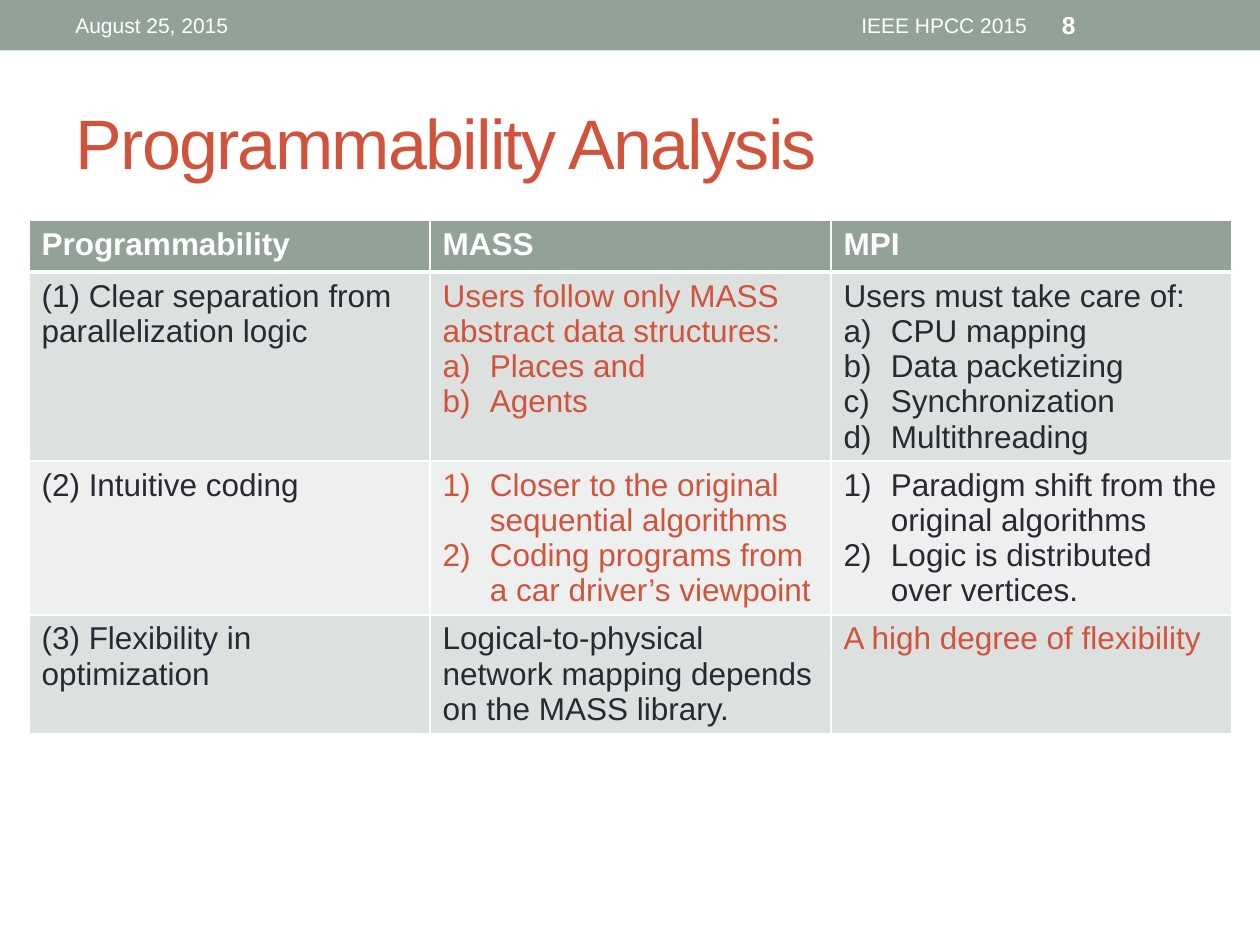
from lxml import etree
from pptx import Presentation
from pptx import util as u
from pptx.dml.color import RGBColor
from pptx.enum import shapes, text
from pptx.oxml import ns

HUES = {"sage": "93A299", "red": "D2533C", "ink": "292934",
        "white": "FFFFFF", "dark": "DCE0DE", "pale": "EEF0EF"}
ALPHA, DIGIT = "alphaLcParenR", "arabicParenR"

HEADS = ["Programmability", "MASS", "MPI"]
ROWS = [
    [("ink", [("(1) Clear separation from parallelization logic", None)]),
     ("red", [("Users follow only MASS abstract data structures:", None),
              ("Places and", ALPHA), ("Agents", ALPHA)]),
     ("ink", [("Users must take care of:", None),
              ("CPU mapping", ALPHA), ("Data packetizing", ALPHA),
              ("Synchronization", ALPHA), ("Multithreading", ALPHA)])],
    [("ink", [("(2) Intuitive coding", None)]),
     ("red", [("Closer to the original sequential algorithms", DIGIT),
              ("Coding programs from a car driver’s viewpoint", DIGIT)]),
     ("ink", [("Paradigm shift from the original algorithms", DIGIT),
              ("Logic is distributed over vertices.", DIGIT)])],
    [("ink", [("(3) Flexibility in optimization", None)]),
     ("ink", [("Logical-to-physical network mapping depends on the MASS library.", None)]),
     ("red", [("A high degree of flexibility", None)])],
]


def color(name):
    return RGBColor.from_string(HUES[name])


def add_run(para, words, size, hue, bold=False):
    run = para.add_run()
    run.text = words
    font = run.font
    font.name, font.size, font.bold = "Arial", u.Pt(size), bold
    font.color.rgb = color(hue)
    return run


def add_band(slide):
    band = slide.shapes.add_shape(shapes.MSO_SHAPE.RECTANGLE, 0, 0,
                                  u.Inches(10), u.Inches(0.4))
    band.shadow.inherit = False
    band.fill.solid()
    band.fill.fore_color.rgb = color("sage")
    band.line.fill.background()


def add_label(slide, left, width, words, size, bold=False,
              align=text.PP_ALIGN.LEFT):
    box = slide.shapes.add_textbox(u.Inches(left), u.Inches(0.02),
                                   u.Inches(width), u.Inches(0.36))
    frame = box.text_frame
    frame.word_wrap = True
    frame.vertical_anchor = text.MSO_ANCHOR.MIDDLE
    para = frame.paragraphs[0]
    para.alignment = align
    add_run(para, words, size, "white", bold)


def set_title(slide, words):
    title = slide.shapes.title
    title.left, title.top = u.Inches(0.5), u.Inches(0.58)
    title.width, title.height = u.Inches(9), u.Inches(1.08)
    frame = title.text_frame
    frame.auto_size = text.MSO_AUTO_SIZE.NONE
    frame.vertical_anchor = text.MSO_ANCHOR.MIDDLE
    para = frame.paragraphs[0]
    para.alignment = text.PP_ALIGN.LEFT
    run = add_run(para, words, 40, "red")
    run._r.get_or_add_rPr().set("spc", "-100")


def set_number(para, kind):
    props = para._p.get_or_add_pPr()
    props.set("marL", str(u.Inches(0.375)))
    props.set("indent", str(-u.Inches(0.375)))
    etree.SubElement(props, ns.qn("a:buFont"), typeface="+mj-lt")
    etree.SubElement(props, ns.qn("a:buAutoNum"), type=kind)


def set_edges(cell, widths):
    props = cell._tc.get_or_add_tcPr()
    for side, width in zip("LRTB", widths):
        line = etree.SubElement(props, ns.qn("a:ln" + side), w=str(u.Pt(width)))
        fill = etree.SubElement(line, ns.qn("a:solidFill"))
        etree.SubElement(fill, ns.qn("a:srgbClr"), val=HUES["white"])


def fill_cell(cell, items, hue, back, widths, bold=False):
    set_edges(cell, widths)
    cell.fill.solid()
    cell.fill.fore_color.rgb = color(back)
    frame = cell.text_frame
    for i, (words, kind) in enumerate(items):
        para = frame.add_paragraph() if i else frame.paragraphs[0]
        if kind:
            set_number(para, kind)
        add_run(para, words, 18, hue, bold)


def add_grid(slide):
    count = len(ROWS) + 1
    grid = slide.shapes.add_table(count, len(HEADS), u.Inches(0.23), u.Inches(1.75),
                                  u.Inches(9.55), u.Inches(0.41 * count)).table
    for c, head in enumerate(HEADS):
        fill_cell(grid.cell(0, c), [(head, None)], "white", "sage", (1, 1, 1, 3), True)
    for r, row in enumerate(ROWS, 1):
        back = "dark" if r % 2 else "pale"
        top = 3 if r == 1 else 1
        for c, (hue, items) in enumerate(row):
            fill_cell(grid.cell(r, c), items, hue, back, (1, 1, top, 1))


def main():
    deck = Presentation()
    deck.slide_width, deck.slide_height = u.Inches(10), u.Inches(7.5)
    slide = deck.slides.add_slide(deck.slide_layouts[5])
    add_band(slide)
    set_title(slide, "Programmability Analysis")
    add_grid(slide)
    add_label(slide, 3.75, 4.5, "IEEE HPCC 2015", 12, align=text.PP_ALIGN.RIGHT)
    add_label(slide, 8.33, 1.17, "8", 14, True)
    add_label(slide, 0.5, 3.17, "August 25, 2015", 12)
    deck.save("out.pptx")


if __name__ == "__main__":
    main()
